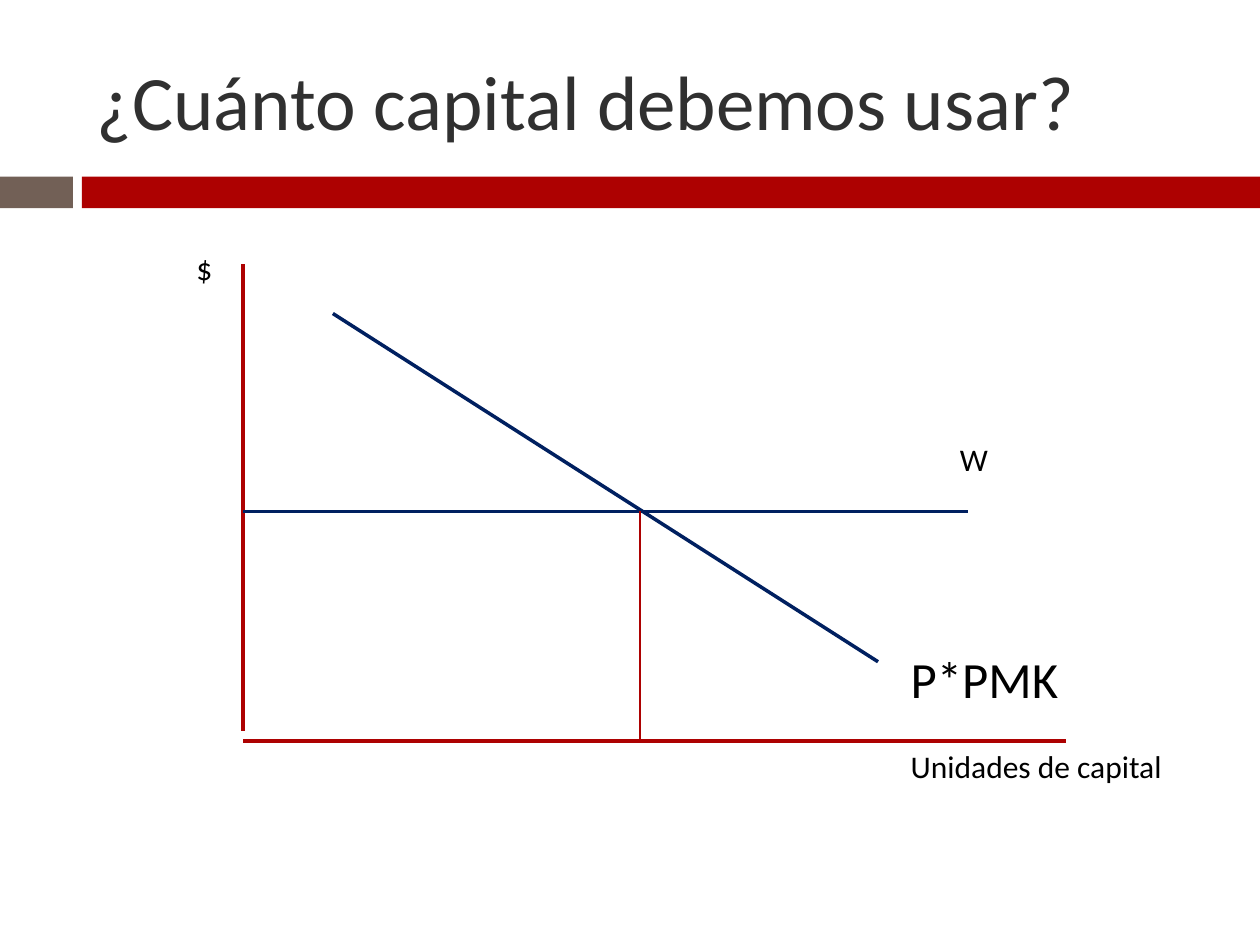
from dataclasses import dataclass

import pptx
import pptx.dml.color
import pptx.enum.shapes
import pptx.enum.text
import pptx.oxml.ns
import pptx.util
from lxml import etree
from pptx.util import Cm

RED = "AD0101"
NAVY = "002060"
BROWN = "726056"
CHARCOAL = "303030"
BLACK = "000000"

AXIS_X = 4.9
AXIS_Y = 14.94
WAGE_Y = 10.31
OPTIMUM_X = 12.9
LABEL_X = 18.11


@dataclass
class Band:
    left: float
    width: float
    color: str


@dataclass
class Segment:
    start: tuple[float, float]
    end: tuple[float, float]
    color: str
    weight: float = 2


@dataclass
class Label:
    text: str
    left: float
    top: float
    width: float
    height: float = 1.02
    size: float = 18
    color: str = BLACK
    anchor: pptx.enum.text.MSO_ANCHOR = pptx.enum.text.MSO_ANCHOR.TOP


BANDS = [Band(0, 1.47, BROWN), Band(1.65, 23.75, RED)]

SEGMENTS = [
    Segment((AXIS_X, 5.33), (AXIS_X, 14.73), RED),
    Segment((AXIS_X, AXIS_Y), (21.49, AXIS_Y), RED),
    Segment((6.71, 6.32), (17.7, 13.34), NAVY),
    Segment((AXIS_X, WAGE_Y), (19.51, WAGE_Y), NAVY),
    Segment((OPTIMUM_X, WAGE_Y), (OPTIMUM_X, AXIS_Y), RED, 0.79),
]

HEADING = Label("¿Cuánto capital debemos usar?", 1.7, 0.64, 22.66, 2.74, 44,
                CHARCOAL, pptx.enum.text.MSO_ANCHOR.MIDDLE)

LABELS = [
    HEADING,
    Label("W", 19.1, 8.74, 2.59),
    Label("P*PMK", LABEL_X, 12.93, 4.6, 1.5, 29),
    Label("$", 3.71, 4.9, 2.59),
    Label("Unidades de capital", LABEL_X, AXIS_Y, 6.4),
]


def rgb(color: str) -> pptx.dml.color.RGBColor:
    return pptx.dml.color.RGBColor.from_string(color)


def draw_band(slide: pptx.slide.Slide, band: Band) -> None:
    strip = slide.shapes.add_shape(
        pptx.enum.shapes.MSO_SHAPE.RECTANGLE,
        Cm(band.left), Cm(3.56), Cm(band.width), Cm(0.64))
    strip.shadow.inherit = False
    strip.fill.solid()
    strip.fill.fore_color.rgb = rgb(band.color)
    strip.line.fill.background()


def draw_segment(slide: pptx.slide.Slide, segment: Segment) -> None:
    stroke = slide.shapes.add_connector(
        pptx.enum.shapes.MSO_CONNECTOR.STRAIGHT,
        *map(Cm, segment.start + segment.end))
    stroke.line.color.rgb = rgb(segment.color)
    stroke.line.width = pptx.util.Pt(segment.weight)
    etree.SubElement(stroke._element.spPr, pptx.oxml.ns.qn("a:effectLst"))


def draw_label(slide: pptx.slide.Slide, label: Label) -> None:
    frame = slide.shapes.add_textbox(
        Cm(label.left), Cm(label.top), Cm(label.width), Cm(label.height)).text_frame
    frame.word_wrap = True
    frame.vertical_anchor = label.anchor
    frame.text = label.text
    font = frame.paragraphs[0].runs[0].font
    font.name = "Calibri"
    font.size = pptx.util.Pt(label.size)
    font.color.rgb = rgb(label.color)


def main() -> None:
    deck = pptx.Presentation()
    deck.slide_width = Cm(25.4)
    deck.slide_height = Cm(19.05)
    slide = deck.slides.add_slide(deck.slide_layouts[6])
    for band in BANDS:
        draw_band(slide, band)
    for segment in SEGMENTS:
        draw_segment(slide, segment)
    for label in LABELS:
        draw_label(slide, label)
    deck.save("out.pptx")


if __name__ == "__main__":
    main()
